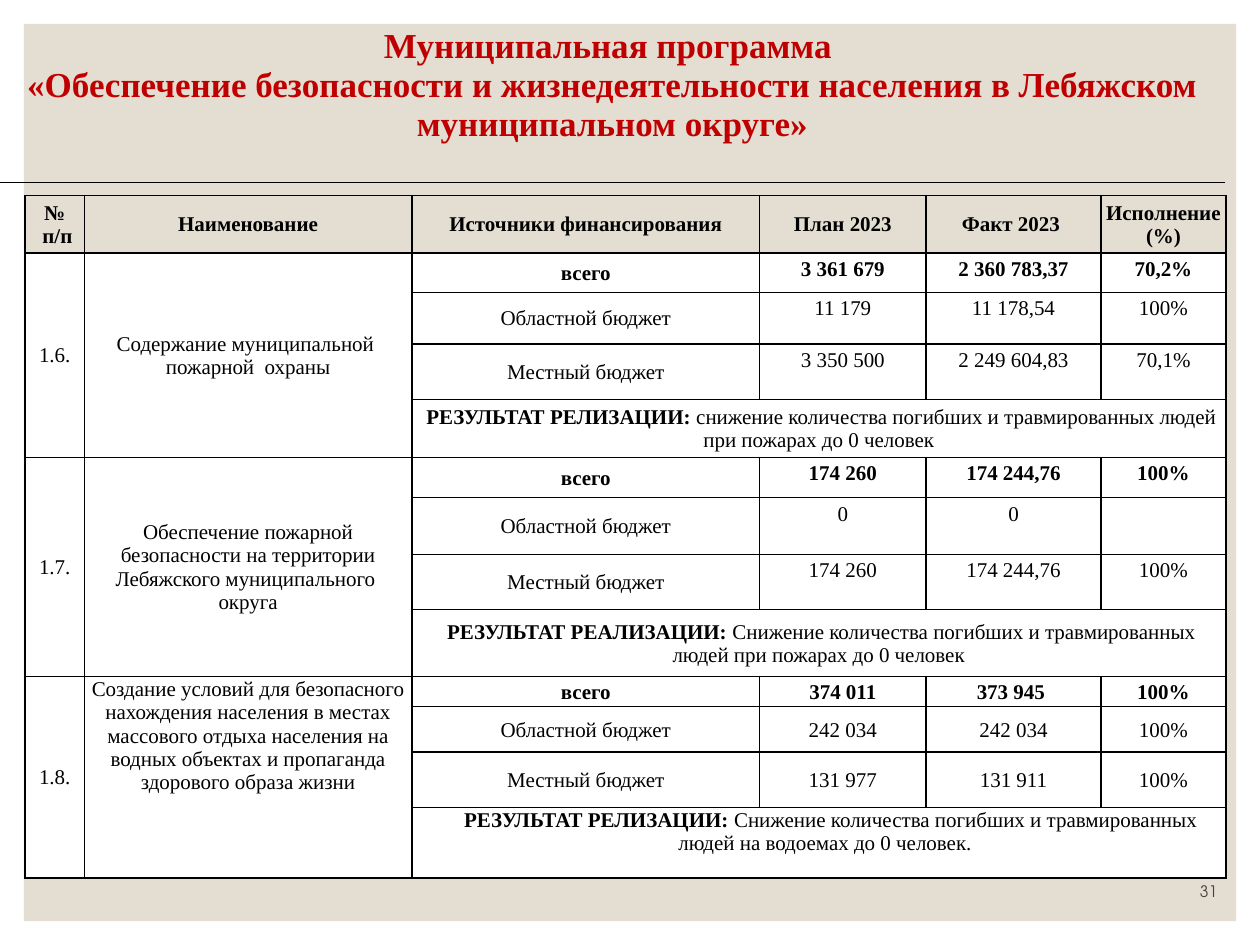
from dataclasses import dataclass

from lxml.etree import SubElement
from pptx import Presentation
from pptx.dml.color import RGBColor
from pptx.enum.shapes import MSO_SHAPE
from pptx.enum.text import MSO_ANCHOR as Anchor, PP_ALIGN as Align
from pptx.oxml.ns import qn
from pptx.slide import Slide
from pptx.util import Inches, Pt

BLACK = RGBColor(0x00, 0x00, 0x00)
WHITE = RGBColor(0xFF, 0xFF, 0xFF)
SAND = RGBColor(0xE3, 0xDE, 0xD1)
RED = RGBColor(0xC0, 0x00, 0x00)
GREY = RGBColor(0x40, 0x40, 0x40)

TIGHT = (0.01, 0.01, 0.01, 0)
ROOMY = (0.04, 0.04, 0.04, 0.04)
COLUMNS = (0.47, 2.6, 2.76, 1.32, 1.39, 0.99)
ROWS = (0.46, 0.31, 0.41, 0.44, 0.46, 0.32, 0.45, 0.44, 0.53, 0.24, 0.36, 0.44, 0.56)
TITLE = (
    "Муниципальная программа ",
    "«Обеспечение безопасности и жизнедеятельности населения в Лебяжском муниципальном округе»",
)
HEADINGS = (
    ("№", " п/п"),
    ("Наименование",),
    ("Источники финансирования",),
    ("План 2023",),
    ("Факт 2023 ",),
    ("Исполнение (%)",),
)
SOURCES = ("всего", "Областной бюджет", "Местный бюджет")


@dataclass
class Measure:
    number: str
    name: tuple
    amounts: tuple
    result: tuple
    top: bool = False


MEASURES = (
    Measure(
        "1.6.",
        ("Содержание муниципальной ", "пожарной  охраны"),
        (("3 361 679", "2 360 783,37", "70,2%"),
         ("11 179", "11 178,54", "100%"),
         ("3 350 500", "2 249 604,83", "70,1%")),
        (" РЕЗУЛЬТАТ РЕЛИЗАЦИИ: ",
         "снижение количества погибших и травмированных людей при пожарах до 0 человек"),
    ),
    Measure(
        "1.7.",
        ("Обеспечение пожарной безопасности на территории Лебяжского муниципального ", "округа"),
        (("174 260", "174 244,76", "100%"),
         ("0", "0", ""),
         ("174 260", "174 244,76", "100%")),
        (" РЕЗУЛЬТАТ РЕАЛИЗАЦИИ: ",
         "Снижение количества погибших и травмированных людей при пожарах до 0 человек"),
    ),
    Measure(
        "1.8.",
        ("Создание условий для безопасного нахождения населения в местах массового отдыха "
         "населения на водных объектах и пропаганда здорового образа жизни",),
        (("374 011", "373 945 ", "100%"),
         ("242 034", "242 034", "100%"),
         ("131 977", "131 911", "100%")),
        ("РЕЗУЛЬТАТ РЕЛИЗАЦИИ: ",
         "Снижение количества погибших и травмированных людей на водоемах до 0 человек."),
        top=True,
    ),
)


@dataclass
class Painter:
    """Hold the text style and the current slide, and draw each kind of element."""
    slide: Slide
    font: str = "Times New Roman"
    size: float = 12

    def panel(self, left, top, width, height, color):
        panel = self.slide.shapes.add_shape(
            MSO_SHAPE.RECTANGLE, Inches(left), Inches(top), Inches(width), Inches(height))
        panel.shadow.inherit = False
        panel.fill.solid()
        panel.fill.fore_color.rgb = color
        panel.line.fill.background()

    def span(self, para, text, color=BLACK, bold=False, size=None, font=None):
        span = para.add_run()
        span.text = text
        span.font.name = font or self.font
        span.font.size = Pt(size or self.size)
        span.font.bold = bold
        span.font.color.rgb = color

    def page_number(self, text):
        box = self.slide.shapes.add_textbox(Inches(8.56), Inches(6.9), Inches(1.2), Inches(0.3))
        box.text_frame.word_wrap = True
        box.text_frame.vertical_anchor = Anchor.BOTTOM
        para = box.text_frame.paragraphs[0]
        para.alignment = Align.RIGHT
        self.span(para, text, GREY, size=9, font="TeX Gyre Adventor")

    def table(self, left, top, columns, rows, borders, fill=None):
        frame = self.slide.shapes.add_table(
            len(rows), len(columns), Inches(left), Inches(top),
            Inches(sum(columns)), Inches(sum(rows)))
        table = frame.table
        table.first_row = table.horz_banding = False
        for column, width in zip(table.columns, columns):
            column.width = Inches(width)
        for row, height in zip(table.rows, rows):
            row.height = Inches(height)
        for cell in table.iter_cells():
            self.border(cell, borders)
            self.fill(cell, fill)
        return table

    def border(self, cell, widths):
        properties = cell._tc.get_or_add_tcPr()
        for side in "LRTB":
            width = widths.get(side, 0)
            line = SubElement(properties, qn(f"a:ln{side}"), w=str(Pt(width)))
            if width:
                paint = SubElement(line, qn("a:solidFill"))
                SubElement(paint, qn("a:srgbClr"), val=str(BLACK))
            else:
                SubElement(line, qn("a:noFill"))

    def fill(self, cell, color):
        if color is None:
            cell.fill.background()
        else:
            cell.fill.solid()
            cell.fill.fore_color.rgb = color

    def cell(self, cell, paragraphs, anchor=Anchor.MIDDLE, insets=TIGHT, **style):
        cell.vertical_anchor = anchor
        cell.margin_left, cell.margin_top, cell.margin_right, cell.margin_bottom = map(Inches, insets)
        frame = cell.text_frame
        for index, text in enumerate(paragraphs):
            para = frame.add_paragraph() if index else frame.paragraphs[0]
            para.alignment = Align.CENTER
            if text:
                self.span(para, text, **style)

    def measure(self, table, first, measure):
        last = first + len(SOURCES)
        anchor = Anchor.TOP if measure.top else Anchor.MIDDLE
        for column, paragraphs in enumerate(((measure.number,), measure.name)):
            head = table.cell(first, column)
            head.merge(table.cell(last, column))
            self.cell(head, paragraphs, anchor if column else Anchor.MIDDLE)
        for offset, (source, amounts) in enumerate(zip(SOURCES, measure.amounts)):
            bold = offset == 0
            self.cell(table.cell(first + offset, 2), (source,), bold=bold)
            for column, amount in enumerate(amounts, start=3):
                place = (Anchor.MIDDLE, TIGHT) if measure.top else (Anchor.TOP, ROOMY)
                self.cell(table.cell(first + offset, column), (amount,), *place, bold=bold)
        result = table.cell(last, 2)
        result.merge(table.cell(last, len(COLUMNS) - 1))
        label, text = measure.result
        self.cell(result, (label,), anchor, bold=True)
        para = result.text_frame.paragraphs[0]
        self.span(para, text)
        if measure.top:
            indents = para._p.get_or_add_pPr()
            indents.set("marL", str(Inches(0.1)))
            indents.set("indent", str(Inches(0.09)))


def main():
    deck = Presentation()
    deck.slide_width, deck.slide_height = Inches(10), Inches(7.5)
    page = Painter(deck.slides.add_slide(deck.slide_layouts[6]))
    page.panel(0.19, 0.19, 9.62, 7.12, SAND)
    page.page_number("31")

    title = page.table(0, 0.21, (9.72,), (1.24,), {"B": 0.5})
    page.cell(title.cell(0, 0), TITLE, Anchor.TOP, color=RED, bold=True, size=20)

    budget = page.table(0.2, 1.55, COLUMNS, ROWS, dict.fromkeys("LRTB", 1), WHITE)
    for column, heading in enumerate(HEADINGS):
        page.fill(budget.cell(0, column), None)
        page.cell(budget.cell(0, column), heading, bold=True)
    for index, measure in enumerate(MEASURES):
        page.measure(budget, 1 + index * (len(SOURCES) + 1), measure)
    deck.save("out.pptx")


if __name__ == "__main__":
    main()
